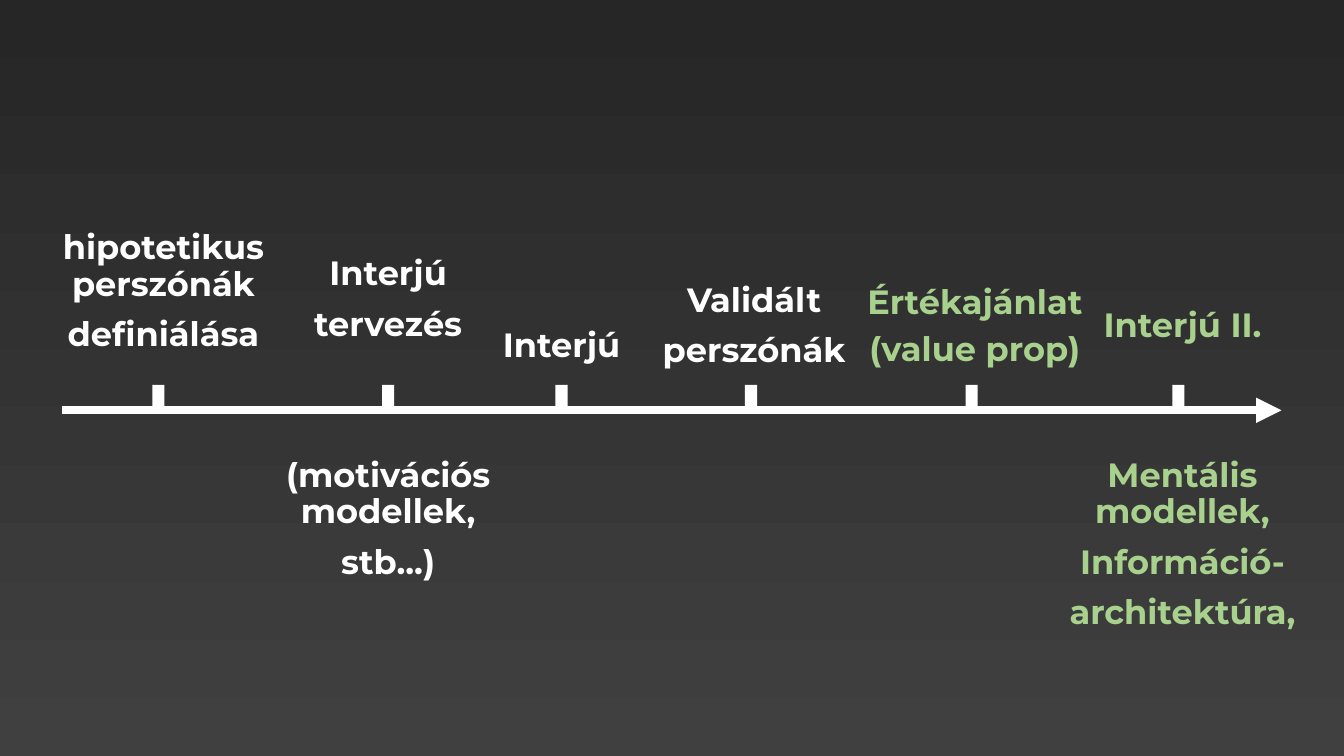
from lxml import etree
from pptx import Presentation
from pptx import util as u
from pptx.dml.color import RGBColor
from pptx.enum import shapes, text
from pptx.oxml.ns import qn

WHITE = RGBColor(0xFF, 0xFF, 0xFF)
GREEN = RGBColor(0xA9, 0xD1, 0x8E)
DARK = RGBColor(0x26, 0x26, 0x26)
GREY = RGBColor(0x40, 0x40, 0x40)

WIDTH, HEIGHT = 13.33, 7.5
AXIS_Y = 54.27
TICK_TOP, TICK_WIDTH, TICK_HEIGHT = 50.9, 0.9, 3.45
LABEL_WIDTH, LABEL_BOTTOM = 22.35, 50.4
NOTE_TOP, NOTE_HEIGHT = 60, 27

STAGES = [
    (11.78, 12.16, 29.87, WHITE, 0.9, ["hipotetikus perszónák", "definiálása"], []),
    (28.88, 28.88, 33.33, WHITE, 0.9, ["Interjú", "tervezés"],
     ["(motivációs modellek,", "stb...)"]),
    (41.78, 41.78, 42.8, WHITE, 0.9, ["Interjú"], []),
    (55.88, 56.11, 36.8, WHITE, 0.9, ["Validált", "perszónák"], []),
    (72.3, 72.53, 37.6, GREEN, 0.8, ["Értékajánlat", "(value prop)"], []),
    (87.68, 87.98, 40.13, GREEN, 0.9, ["Interjú II."],
     ["Mentális modellek,", "Információ-", "architektúra,"]),
]


def across(percent):
    return u.Inches(WIDTH * percent / 100)


def down(percent):
    return u.Inches(HEIGHT * percent / 100)


def paint_background(slide):
    fill = slide.background.fill
    fill.gradient()
    fill.gradient_angle = 270
    for stop, position, colour in zip(fill.gradient_stops, (0, 1), (DARK, GREY)):
        stop.position = position
        stop.color.rgb = colour


def add_axis(slide):
    axis = slide.shapes.add_connector(
        shapes.MSO_CONNECTOR.STRAIGHT,
        across(4.58), down(AXIS_Y), across(95.35), down(AXIS_Y))
    axis.line.color.rgb = WHITE
    axis.line.width = u.Pt(6)
    etree.SubElement(axis.line._get_or_add_ln(), qn("a:tailEnd"), type="triangle")
    etree.SubElement(axis._element.spPr, qn("a:effectLst"))


def add_tick(slide, centre):
    tick = slide.shapes.add_shape(
        shapes.MSO_SHAPE.RECTANGLE, across(centre - TICK_WIDTH / 2),
        down(TICK_TOP), across(TICK_WIDTH), down(TICK_HEIGHT))
    tick.shadow.inherit = False
    tick.fill.solid()
    tick.fill.fore_color.rgb = WHITE
    tick.line.fill.background()


def add_label(slide, centre, top, height, colour, spacing, lines):
    box = slide.shapes.add_textbox(
        across(centre - LABEL_WIDTH / 2), down(top),
        across(LABEL_WIDTH), down(height))
    frame = box.text_frame
    frame.word_wrap = True
    for number, line in enumerate(lines):
        para = frame.add_paragraph() if number else frame.paragraphs[0]
        para.text = line
        para.alignment = text.PP_ALIGN.CENTER
        para.line_spacing = spacing
        para.space_before = u.Pt(10 if number else 0)
        para.font.name = "Montserrat"
        para.font.size = u.Pt(24)
        para.font.bold = True
        para.font.color.rgb = colour


def main():
    deck = Presentation()
    deck.slide_width = u.Inches(WIDTH)
    deck.slide_height = u.Inches(HEIGHT)
    slide = deck.slides.add_slide(deck.slide_layouts[6])
    paint_background(slide)
    add_axis(slide)
    for tick, centre, top, colour, spacing, label, note in STAGES:
        add_tick(slide, tick)
        add_label(slide, centre, top, LABEL_BOTTOM - top, colour, spacing, label)
        if note:
            add_label(slide, centre, NOTE_TOP, NOTE_HEIGHT, colour, spacing, note)
    deck.save("out.pptx")


if __name__ == "__main__":
    main()
